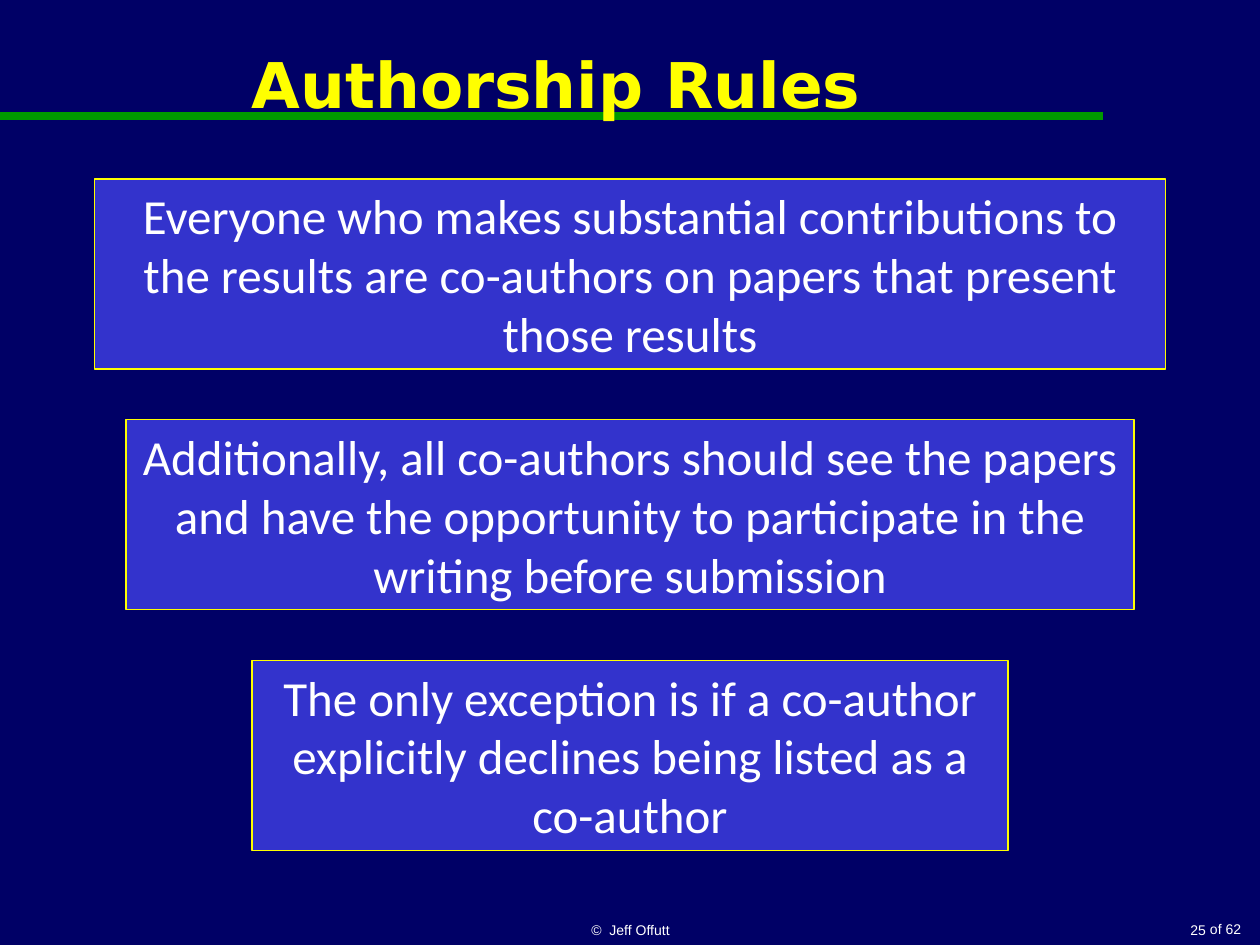
import pptx
import pptx.util
import pptx.dml.color
import pptx.enum.shapes
import pptx.enum.text
import pptx.oxml.ns
import lxml.etree
from pptx.util import Inches

COLOURS = {
    "background": "000066",
    "rule": "009900",
    "title": "FFFF00",
    "box": "3333CC",
    "border": "FFFF00",
    "text": "FFFFFF",
}
ALIGN = pptx.enum.text.PP_ALIGN
ANCHOR = pptx.enum.text.MSO_ANCHOR
RULES = [
    (8.5, "Everyone who makes substantial contributions to the results "
          "are co-authors on papers that present those results"),
    (8, "Additionally, all co-authors should see the papers and have the "
        "opportunity to participate in the writing before submission"),
    (6, "The only exception is if a co-author explicitly declines being "
        "listed as a co-author"),
]


class SlideBuilder:
    """Hold the style and the current slide, and add elements to it."""

    def __init__(self, deck):
        self.slide = deck.slides.add_slide(deck.slide_layouts[5])
        fill = self.slide.background.fill
        fill.solid()
        fill.fore_color.rgb = self.colour("background")

    def colour(self, name):
        return pptx.dml.color.RGBColor.from_string(COLOURS[name])

    def set_text(self, shape, text, font, size, colour="text", align=ALIGN.CENTER,
                 anchor=ANCHOR.MIDDLE, bold=False, wrap=True):
        frame = shape.text_frame
        frame.text = text
        frame.word_wrap = wrap
        frame.auto_size = pptx.enum.text.MSO_AUTO_SIZE.NONE
        frame.vertical_anchor = anchor
        para = frame.paragraphs[0]
        para.alignment = align
        for span in para.runs:
            span.font.name = font
            span.font.size = pptx.util.Pt(size)
            span.font.bold = bold
            span.font.color.rgb = self.colour(colour)

    def rule_line(self, length, top):
        line = self.slide.shapes.add_connector(
            pptx.enum.shapes.MSO_CONNECTOR.STRAIGHT,
            Inches(0), Inches(top), Inches(length), Inches(top))
        line.line.color.rgb = self.colour("rule")
        line.line.width = pptx.util.Pt(4.5)
        lxml.etree.SubElement(line._element.spPr, pptx.oxml.ns.qn("a:effectLst"))
        self.slide.shapes.title._element.addprevious(line._element)

    def title(self, text, left, top, width, height):
        title = self.slide.shapes.title
        title.left, title.top = Inches(left), Inches(top)
        title.width, title.height = Inches(width), Inches(height)
        self.set_text(title, text, "DejaVu Sans", 36, "title", bold=True)

    def footer(self, text, left, top, width, height, align,
               anchor=ANCHOR.BOTTOM, wrap=True):
        footer = self.slide.shapes.add_textbox(
            Inches(left), Inches(top), Inches(width), Inches(height))
        self.set_text(footer, text, "Arial", 8, align=align, anchor=anchor, wrap=wrap)

    def centred_box(self, text, top, width, height):
        box = self.slide.shapes.add_shape(
            pptx.enum.shapes.MSO_SHAPE.RECTANGLE,
            Inches((10 - width) / 2), Inches(top), Inches(width), Inches(height))
        box.shadow.inherit = False
        box.fill.solid()
        box.fill.fore_color.rgb = self.colour("box")
        box.line.color.rgb = self.colour("border")
        box.line.width = pptx.util.Pt(0.75)
        self.set_text(box, text, "Calibri", 28)


def main():
    deck = pptx.Presentation()
    deck.slide_width, deck.slide_height = Inches(10), Inches(7.5)
    page = SlideBuilder(deck)
    page.title("Authorship Rules", 0.08, 0, 8.67, 1.33)
    page.rule_line(8.75, 0.92)
    page.footer("of 62", 9.5, 7.26, 0.45, 0.24, ALIGN.RIGHT, ANCHOR.TOP, False)
    page.footer("©  Jeff Offutt", 3.42, 7.17, 3.17, 0.33, ALIGN.CENTER)
    page.footer("25", 7.92, 7.17, 1.75, 0.33, ALIGN.RIGHT)
    for index, (width, text) in enumerate(RULES):
        page.centred_box(text, 1.42 + 1.91 * index, width, 1.51)
    deck.save("out.pptx")


if __name__ == "__main__":
    main()
